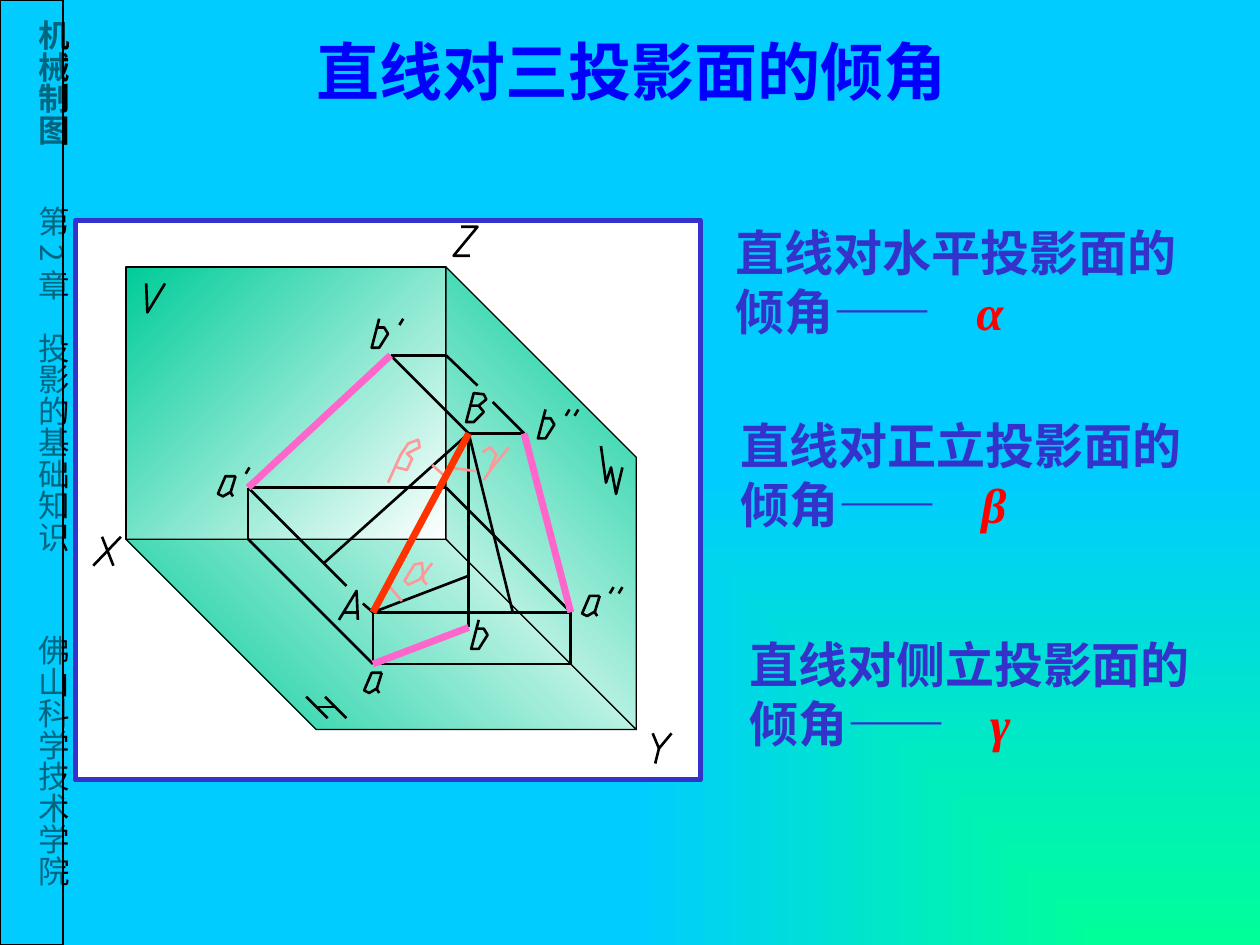
from dataclasses import dataclass
from typing import NamedTuple

from lxml.etree import SubElement
from pptx import Presentation
from pptx.dml.color import RGBColor as Rgb
from pptx.enum.shapes import MSO_CONNECTOR as Link, MSO_SHAPE as Form
from pptx.enum.text import MSO_ANCHOR as Anchor, PP_ALIGN as Align
from pptx.oxml import parse_xml
from pptx.oxml.ns import nsdecls, qn
from pptx.util import Inches, Pt

CELL = Inches(0.01)  # the grid has 1000 columns and 750 rows
COLS, ROWS = 1000, 750


@dataclass(frozen=True)
class Theme:
    sky: str = "00CCFF"
    mint: str = "00FF99"
    jade: str = "00CC99"
    white: str = "FFFFFF"
    black: str = "000000"
    blue: str = "0000FF"
    navy: str = "3333CC"
    red: str = "FF0000"
    flame: str = "FF3300"
    pink: str = "FF66CC"
    rose: str = "FF9999"
    head: int = 36
    body: int = 28
    side: int = 18
    thin: float = 0.75
    pen: float = 1.5
    bold: float = 4
    sans: str = "Noto Sans CJK SC"
    serif: str = "Times New Roman"


T = Theme()


class Pos(NamedTuple):
    x: int
    y: int


class Mark(NamedTuple):
    glyph: str
    x: int
    y: int
    primes: int = 0
    color: str = T.black


class Note(NamedTuple):
    x: int
    y: int
    words: str
    sign: str


class Side(NamedTuple):
    y: int
    words: str
    font: str
    bold: bool


class Spot(NamedTuple):
    """A point in space: distances from planes W, V and H."""
    x: int
    y: int
    z: int

    def flat(self, axes: str = "xyz") -> Pos:
        """Draw the point, or its foot on the plane or axis named by axes."""
        x, y, z = (n if axis in axes else 0 for axis, n in zip("xyz", self))
        return Pos(354 - x + y, 428 + y - z)


# Pen strokes of each letter, measured from its top left corner
GLYPHS = {
    "a": [[(14, 0), (6, 0), (0, 14), (4, 16), (11, 12)], [(14, 0), (10, 13), (12, 16)]],
    "b": [[(6, 0), (0, 23), (6, 23), (13, 12), (10, 7), (4, 7)]],
    "′": [[(3, 0), (0, 5)]],
    "A": [[(0, 23), (14, 0), (15, 23)], [(15, 17), (4, 17)]],
    "B": [[(3, 10), (10, 10), (14, 15), (6, 23), (0, 23), (6, 0), (14, 1), (16, 5), (10, 10)]],
    "H": [[(17, 17), (0, 0)], [(8, 8), (23, 8)], [(15, 0), (32, 17)]],
    "V": [[(0, 0), (1, 23), (15, 0)]],
    "W": [[(0, 0), (4, 29), (8, 17), (12, 38), (17, 17)]],
    "X": [[(7, 0), (16, 23)], [(22, 0), (0, 23)]],
    "Y": [[(0, 0), (5, 12), (15, 0)], [(5, 12), (2, 24)]],
    "Z": [[(6, 0), (19, 0), (0, 23), (13, 23)]],
    "α": [[(18, 17), (15, 14), (14, 0), (8, 1), (0, 14), (3, 17), (12, 13), (22, 0)]],
    "β": [[(0, 34), (10, 12), (16, 3), (24, 0), (25, 6), (15, 11), (19, 15), (15, 24), (7, 22)]],
    "γ": [[(0, 4), (6, 0), (11, 6), (6, 17)], [(21, 0), (7, 17), (1, 26)]],
}
MARKS = [
    Mark("V", 116, 225), Mark("H", 243, 553), Mark("W", 477, 354),
    Mark("X", 74, 426), Mark("Y", 518, 582), Mark("Z", 360, 180),
    Mark("A", 269, 469), Mark("B", 370, 312),
    Mark("a", 289, 534), Mark("a", 173, 378, 1), Mark("a", 462, 473, 2),
    Mark("b", 374, 492), Mark("b", 295, 253, 1), Mark("b", 427, 325, 2),
    Mark("α", 321, 447, color=T.rose), Mark("β", 308, 349, color=T.rose),
    Mark("γ", 383, 355, color=T.rose),
]
CORNER = Spot(254, 151, 216)
A_END, B_END = Spot(157, 99, 41), Spot(44, 62, 146)
A, B = A_END.flat(), B_END.flat()
B_FOOT = Pos(B.x, 498)

NOTES = [
    Note(574, 172, "直线对水平投影面的倾角——", "α"),
    Note(578, 325, "直线对正立投影面的倾角——", "β"),
    Note(585, 499, "直线对侧立投影面的倾角——", "γ"),
]
SIDES = [
    Side(16, "机械制图", T.serif, True),
    Side(163, "第2章　投影的基础知识", T.sans, False),
    Side(504, "佛山科学技术学院", "Noto Sans CJK JP", False),
]


def tint(slide) -> None:
    """Fill the background with a gradient that spreads from the lower right corner."""
    stops = "".join(f'<a:gs pos="{pos}"><a:srgbClr val="{color}"/></a:gs>'
                    for pos, color in ((0, T.mint), (100000, T.sky)))
    slide.background.fill.solid()
    solid = slide.background._cSld.bg.bgPr.find(qn("a:solidFill"))
    solid.getparent().replace(solid, parse_xml(
        f'<a:gradFill rotWithShape="0" {nsdecls("a")}><a:gsLst>{stops}</a:gsLst>'
        '<a:path path="rect"><a:fillToRect l="100000" t="100000"/></a:path></a:gradFill>'))


def edge(shape, color: str, width: float) -> None:
    shape.line.color.rgb = Rgb.from_string(color)
    shape.line.width = Pt(width)


def paint(shape, color: str) -> None:
    shape.fill.solid()
    shape.fill.fore_color.rgb = Rgb.from_string(color)


def box(slide, x: int, y: int, w: int, h: int):
    shape = slide.shapes.add_shape(Form.RECTANGLE, *(n * CELL for n in (x, y, w, h)))
    shape.shadow.inherit = False
    return shape


def outline(slide, pts: list, close: bool):
    form = slide.shapes.build_freeform(*pts[0], scale=CELL)
    form.add_line_segments(pts[1:], close=close)
    shape = form.convert_to_shape()
    shape.shadow.inherit = False
    return shape


def plane(slide, corners: tuple, colors: tuple, angle: int) -> None:
    shape = outline(slide, [CORNER.flat(axes) for axes in corners], True)
    shape.fill.gradient()
    shape.fill.gradient_angle = angle
    for stop, color in zip(shape.fill.gradient_stops, colors):
        stop.color.rgb = Rgb.from_string(color)
    edge(shape, T.black, T.thin)


def rule(slide, start: Pos, end: Pos, color: str = T.black, width: float = T.pen) -> None:
    link = slide.shapes.add_connector(Link.STRAIGHT, *(n * CELL for n in (*start, *end)))
    edge(link, color, width)
    SubElement(link._element.spPr, qn("a:effectLst"))


def letter(slide, mark: Mark) -> None:
    for stroke in GLYPHS[mark.glyph]:
        pts = [Pos(mark.x + x, mark.y + y) for x, y in stroke]
        if len(pts) == 2:
            rule(slide, *pts, mark.color)
        else:
            shape = outline(slide, pts, False)
            shape.fill.background()
            edge(shape, mark.color, T.pen)
    rise = 7 if mark.glyph == "a" else 0
    for step in range(mark.primes):
        letter(slide, Mark("′", mark.x + 22 + 7 * step, mark.y - rise))


def figure(slide) -> None:
    """Draw the planes, the line AB with its projections, and the angles."""
    plane(slide, ("xz", "z", "", "x"), (T.jade, T.white), 315)
    plane(slide, ("x", "", "y", "xy"), (T.jade, T.white), 45)
    plane(slide, ("z", "", "y", "yz"), (T.white, T.jade), 45)
    for mark in MARKS:
        letter(slide, mark)

    for axes in ("xz x", "x xy", "xy y", "y yz", "yz z", "z xz", "xyz xy", "xyz yz"):
        rule(slide, *map(A_END.flat, axes.split()))
    for axes in ("xz xyz", "xz z", "xyz yz"):
        rule(slide, *map(B_END.flat, axes.split()))
    rule(slide, B, B_FOOT)
    # Lines broken where a letter stands
    rule(slide, A_END.flat("xz"), Pos(275, 465))
    rule(slide, Pos(288, 479), A)
    rule(slide, B_END.flat("z"), Pos(379, 306))
    rule(slide, Pos(391, 319), B_END.flat("yz"))
    # Parallels to the projections, then the ticks of the angles
    rule(slide, A, Pos(B.x, 457))
    rule(slide, B, Pos(257, 447))
    rule(slide, B, Pos(407, A.y))
    rule(slide, Pos(319, 477), Pos(307, 463), T.rose)
    rule(slide, Pos(343, 369), Pos(352, 377), T.rose)
    rule(slide, Pos(356, 371), Pos(378, 374), T.rose)

    rule(slide, A_END.flat("xy"), B_FOOT, T.pink, T.bold)
    for axes in ("xz", "yz"):
        rule(slide, A_END.flat(axes), B_END.flat(axes), T.pink, T.bold)
    rule(slide, A, B, T.flame, T.bold)


def write(slide, x: int, y: int, w: int, h: int, words: str, size: int,
          color: str, font: str, bold: bool = True):
    """Add a text box of one paragraph and return its frame."""
    frame = slide.shapes.add_textbox(*(n * CELL for n in (x, y, w, h))).text_frame
    frame.word_wrap = True
    para = frame.paragraphs[0]
    para.add_run().text = words
    para.font.size, para.font.name, para.font.bold = Pt(size), font, bold
    para.font.color.rgb = Rgb.from_string(color)
    return frame


def label(slide, side: Side) -> None:
    frame = write(slide, 0, side.y, 62, 26 * len(side.words), side.words, T.side,
                  T.black, side.font, side.bold)
    frame.margin_top = frame.margin_bottom = 0
    frame._txBody.bodyPr.set("vert", "eaVert")


def remark(slide, note: Note) -> None:
    frame = write(slide, note.x, note.y, 400, 103, note.words + "\t", T.body, T.navy, T.serif)
    para = frame.paragraphs[0]
    tabs = parse_xml(f'<a:tabLst {nsdecls("a")}><a:tab pos="{191 * CELL}" algn="l"/></a:tabLst>')
    para._p.get_or_add_pPr().find(qn("a:defRPr")).addprevious(tabs)
    sign = para.add_run()
    sign.text = note.sign
    sign.font.italic = True
    sign.font.color.rgb = Rgb.from_string(T.red)


def main() -> None:
    deck = Presentation()
    deck.slide_width, deck.slide_height = COLS * CELL, ROWS * CELL
    slide = deck.slides.add_slide(deck.slide_layouts[6])
    tint(slide)

    for side in SIDES:
        label(slide, side)
    band = box(slide, 0, 0, 50, ROWS)
    paint(band, T.sky)
    SubElement(band._element.spPr.find(".//" + qn("a:srgbClr")), qn("a:alpha"), val="50000")
    edge(band, T.black, T.thin)

    title = write(slide, 240, 21, 522, 70, "直线对三投影面的倾角", T.head, T.blue, T.sans)
    title.vertical_anchor = Anchor.MIDDLE
    title.paragraphs[0].alignment = Align.CENTER

    frame = box(slide, 60, 175, 496, 444)
    paint(frame, T.white)
    edge(frame, T.navy, 3)
    for note in NOTES:
        remark(slide, note)
    figure(slide)
    deck.save("out.pptx")


if __name__ == "__main__":
    main()
